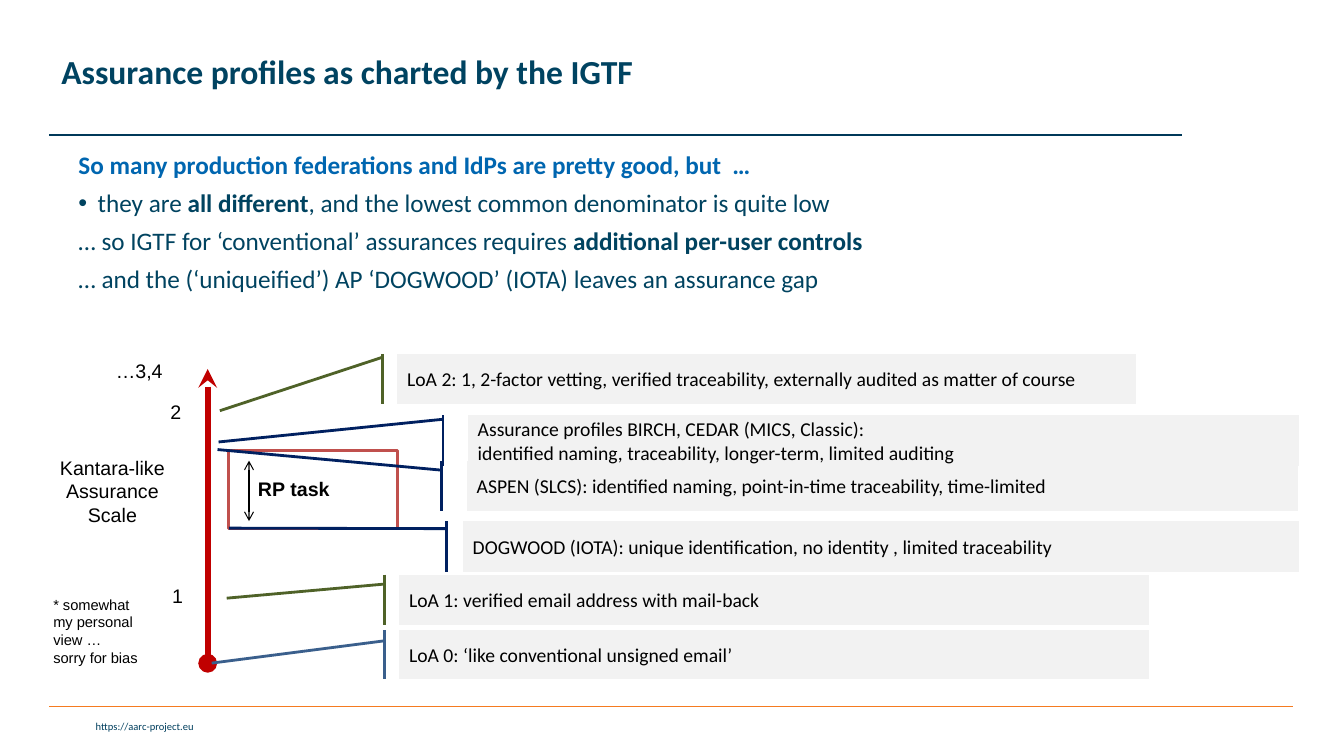
from pptx import Presentation
from pptx.dml.color import RGBColor
from pptx.enum.shapes import MSO_CONNECTOR, MSO_SHAPE
from pptx.enum.text import MSO_ANCHOR, PP_ALIGN
from pptx.oxml.ns import qn
from pptx.util import Pt
from lxml.etree import SubElement

PX = 9144
NAVY, TEAL, GREEN, STEEL = "002060", "004360", "4F6228", "3A5F8C"

CALLOUTS = [
    ("LoA 0: ‘like conventional unsigned email’",
     (396, 625, 744, 49), STEEL, (0.22, -0.02, 0.67, -0.25)),
    ("LoA 1: verified email address with mail-back",
     (396, 570, 744, 50), GREEN, (0.19, -0.02, 0.47, -0.23)),
    ("DOGWOOD (IOTA): unique identification, no identity , limited traceability",
     (459, 517, 829, 50), NAVY, (0.15, -0.02, 0.14, -0.28)),
    ("ASPEN (SLCS): identified naming, point-in-time traceability, time-limited",
     (463, 457, 824, 50), NAVY, (0.19, -0.03, -0.22, -0.3)),
    ("Assurance profiles BIRCH, CEDAR (MICS, Classic):\n"
     "identified naming, traceability, longer-term, limited auditing",
     (464, 412, 824, 50), NAVY, (0.08, -0.03, 0.53, -0.3)),
    ("LoA 2: 1, 2-factor vetting, verified traceability, externally audited as matter of course",
     (394, 351, 733, 50), GREEN, (0.07, -0.02, 1.13, -0.24)),
]

SCALE_LABELS = [
    ("Kantara-like\nAssurance\nScale", (49, 447, 125, 81), {"align": PP_ALIGN.CENTER}),
    ("* somewhat\nmy personal\nview …\nsorry for bias", (43, 586, 105, 81), {"size": 10.5}),
    ("1", (161, 574, 31, 34), {}),
    ("2", (159, 392, 31, 34), {}),
    ("…3,4", (105, 351, 67, 34), {}),
    ("RP task", (246, 468, 92, 34), {"bold": True}),
]

BODY = [
    [("So many production federations and IdPs are pretty good, but  …", True)],
    [("they are ", False), ("all different", True),
     (", and the lowest common denominator is quite low", False)],
    [("… so IGTF for ‘conventional’ assurances requires ", False),
     ("additional per-user controls", True)],
    [("… and the (‘uniqueified’) AP ‘DOGWOOD’ (IOTA) leaves an assurance gap", False)],
]


def rgb(value):
    return RGBColor.from_string(value)


def emu(*lengths):
    return [length * PX for length in lengths]


def write(paragraph, text, size=14, font="Calibri", color="000000", bold=False,
          align=PP_ALIGN.LEFT):
    paragraph.alignment = align
    for index, line in enumerate(text.split("\n")):
        if index:
            paragraph.add_line_break()
        run = paragraph.add_run()
        run.text = line
        run.font.size = Pt(size)
        run.font.name = font
        run.font.bold = bold
        run.font.color.rgb = rgb(color)


def add_box(slide, bounds, wrap=True, anchor=MSO_ANCHOR.TOP):
    frame = slide.shapes.add_textbox(*emu(*bounds)).text_frame
    frame.word_wrap = wrap
    frame.vertical_anchor = anchor
    return frame


def add_shape(slide, kind, bounds, fill, line):
    shape = slide.shapes.add_shape(kind, *emu(*bounds))
    shape.shadow.inherit = False
    shape.fill.solid()
    shape.fill.fore_color.rgb = rgb(fill)
    shape.line.color.rgb = rgb(line)
    shape.line.width = Pt(2)
    return shape


def add_line(slide, ends, color, width, head=None, tail=None):
    connector = slide.shapes.add_connector(MSO_CONNECTOR.STRAIGHT, *emu(*ends))
    connector.line.color.rgb = rgb(color)
    connector.line.width = Pt(width)
    outline = connector.line._get_or_add_ln()
    for tag, arrow in (("a:headEnd", head), ("a:tailEnd", tail)):
        if arrow:
            SubElement(outline, qn(tag), type=arrow)
    SubElement(connector._element.spPr, qn("a:effectLst"))


def add_callout(slide, text, bounds, color, pointer):
    shape = add_shape(slide, MSO_SHAPE.LINE_CALLOUT_1_ACCENT_BAR, bounds, "F2F2F2", color)
    for index, value in enumerate(pointer):
        shape.adjustments[index] = value
    frame = shape.text_frame
    frame.word_wrap = True
    frame.vertical_anchor = MSO_ANCHOR.MIDDLE
    write(frame.paragraphs[0], text)


def add_bullet(paragraph):
    properties = paragraph._p.get_or_add_pPr()
    properties.set("marL", str(19 * PX))
    properties.set("indent", str(-19 * PX))
    SubElement(properties, qn("a:buFont"), typeface="Arial")
    SubElement(properties, qn("a:buChar"), char="•")


def add_body(slide):
    frame = add_box(slide, (68, 147, 1228, 179))
    for index, runs in enumerate(BODY):
        paragraph = frame.add_paragraph() if index else frame.paragraphs[0]
        if index == 1:
            add_bullet(paragraph)
        paragraph.line_spacing = 0.9
        if index:
            paragraph.space_before = Pt(7.5)
        for text, bold in runs:
            write(paragraph, text, size=18, color=TEAL if index else "0066B0", bold=bold)


def main():
    presentation = Presentation()
    presentation.slide_width, presentation.slide_height = emu(1333, 750)
    slide = presentation.slides.add_slide(presentation.slide_layouts[6])

    add_line(slide, (49, 701, 1282, 701), "F57B20", 1)
    footer = add_box(slide, (3, 709, 199, 23))
    write(footer.paragraphs[0], "https://aarc-project.eu", size=7.5, color="003F5E",
          align=PP_ALIGN.RIGHT)
    add_line(slide, (1172, 134, 49, 134), "003959", 1)
    title = add_box(slide, (51, 22, 989, 101), anchor=MSO_ANCHOR.MIDDLE)
    title.paragraphs[0].line_spacing = 0.9
    write(title.paragraphs[0], "Assurance profiles as charted by the IGTF", size=24,
          color="004361", bold=True)
    add_body(slide)

    add_shape(slide, MSO_SHAPE.RECTANGLE, (227, 447, 167, 77), "FFFFFF", "C0504D")
    add_line(slide, (206, 366, 206, 658), "C00000", 4.5, head="stealth", tail="oval")
    for callout in CALLOUTS:
        add_callout(slide, *callout)
    add_line(slide, (247, 457, 247, 517), "000000", 0.75, head="arrow", tail="arrow")
    for text, bounds, style in SCALE_LABELS:
        write(add_box(slide, bounds, wrap=False).paragraphs[0], text, font="Arial", **style)

    presentation.save("out.pptx")


if __name__ == "__main__":
    main()
